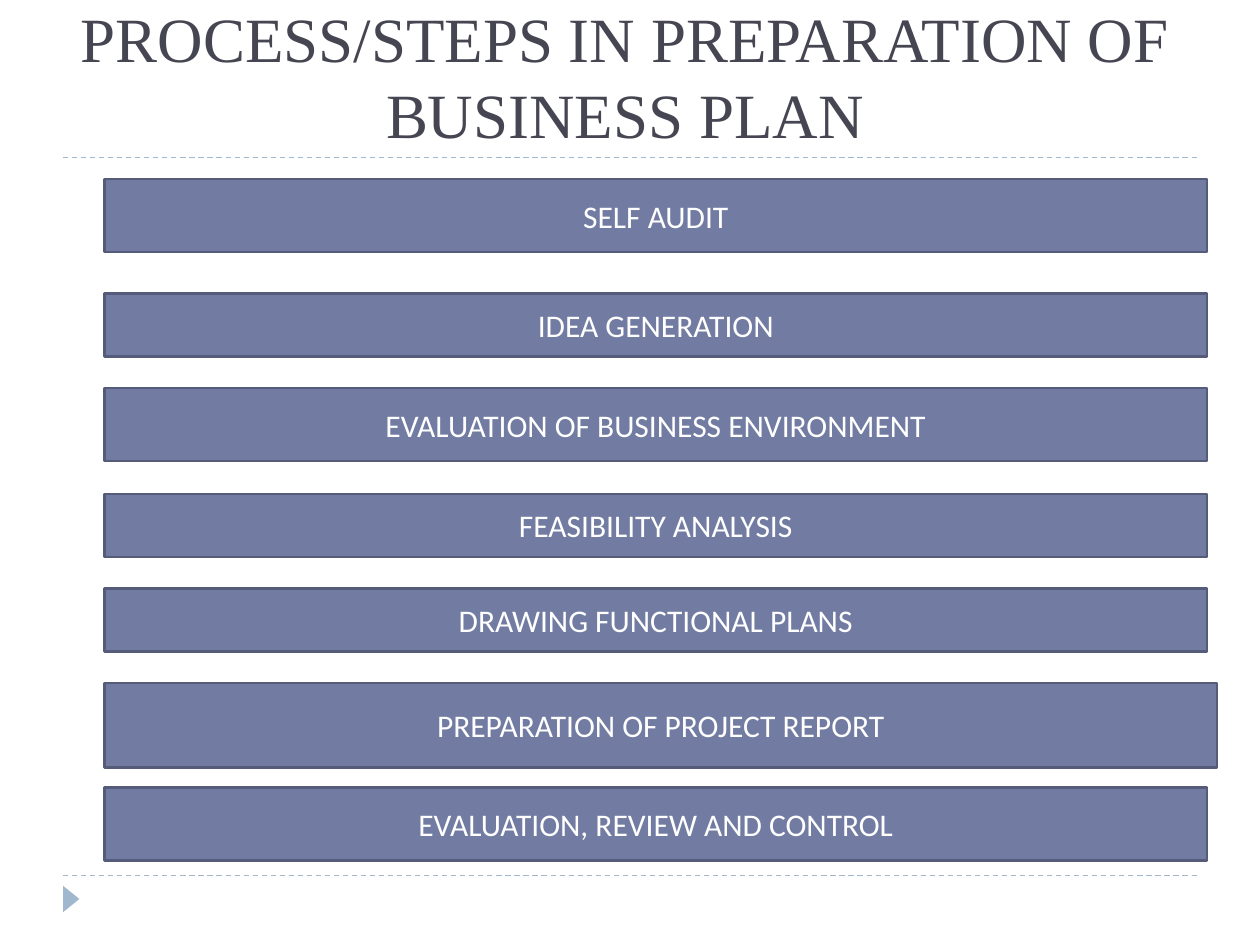
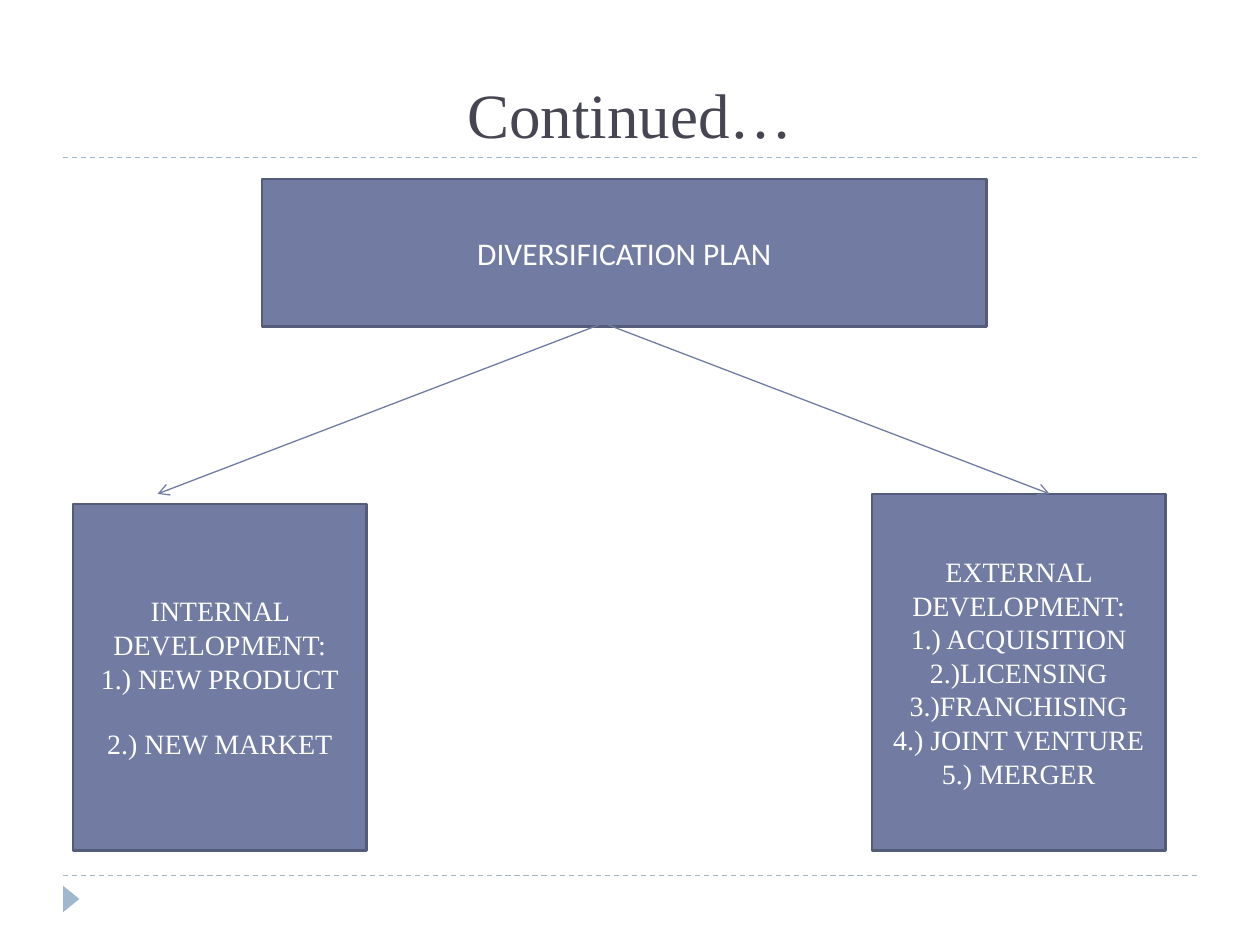
import pptx
import pptx.util
import pptx.dml.color
import pptx.enum.dml
import pptx.enum.shapes
import pptx.enum.text
import pptx.oxml.ns
import lxml.etree
import dataclasses

Inches = pptx.util.Inches
Pt = pptx.util.Pt
RGBColor = pptx.dml.color.RGBColor
Shapes = pptx.enum.shapes.MSO_SHAPE
Anchor = pptx.enum.text.MSO_ANCHOR
qn = pptx.oxml.ns.qn


@dataclasses.dataclass(frozen=True)
class Theme:
    title_color: RGBColor = RGBColor.from_string("464653")
    box_fill: RGBColor = RGBColor.from_string("727CA3")
    box_line: RGBColor = RGBColor.from_string("545C79")
    box_text: RGBColor = RGBColor.from_string("FFFFFF")
    accent: RGBColor = RGBColor.from_string("9FB8CD")
    heading_font: str = "Times New Roman"
    body_font: str = "Calibri"
    title_size: Pt = Pt(36)
    box_size: Pt = Pt(18)
    list_size: Pt = Pt(16)
    blank_line: Pt = Pt(18.4)
    box_border: Pt = Pt(1.5)
    thin_line: Pt = Pt(0.75)


theme = Theme()
title_format = {"name": theme.heading_font, "size": theme.title_size}
label_format = {"name": theme.body_font, "size": theme.box_size}
list_format = {"name": theme.heading_font, "size": theme.list_size}


def write_text(shape, lines, font_format, color, anchor):
    frame = shape.text_frame
    frame.text = "\n".join(lines)
    frame_format = {"word_wrap": True, "vertical_anchor": anchor,
                    "auto_size": pptx.enum.text.MSO_AUTO_SIZE.NONE}
    for name, value in frame_format.items():
        setattr(frame, name, value)
    for paragraph in frame.paragraphs:
        paragraph.alignment = pptx.enum.text.PP_ALIGN.CENTER
        font = paragraph.runs[0].font
        for name, value in font_format.items():
            setattr(font, name, value)
        font.color.rgb = color


def add_line(slide, start_x, start_y, end_x, end_y, color):
    line = slide.shapes.add_connector(
        pptx.enum.shapes.MSO_CONNECTOR.STRAIGHT,
        Inches(start_x), Inches(start_y), Inches(end_x), Inches(end_y))
    line.line.color.rgb = color
    line.line.width = theme.thin_line
    lxml.etree.SubElement(line._element.spPr, qn("a:effectLst"))
    return line


presentation = pptx.Presentation()
presentation.slide_width = Inches(10)
presentation.slide_height = Inches(7.5)

step_left, step_width = 0.83, 8.75
steps = [
    ("SELF AUDIT", 1.42, step_width, 0.58),
    ("IDEA GENERATION", 2.33, step_width, 0.5),
    ("EVALUATION OF BUSINESS ENVIRONMENT", 3.08, step_width, 0.58),
    ("FEASIBILITY ANALYSIS", 3.92, step_width, 0.5),
    ("DRAWING FUNCTIONAL PLANS", 4.67, step_width, 0.5),
    ("PREPARATION OF PROJECT REPORT", 5.42, 8.83, 0.67),
    ("EVALUATION, REVIEW AND CONTROL", 6.25, step_width, 0.58),
]
step_boxes = [([label], (step_left, top, width, height), label_format)
              for label, top, width, height in steps]

internal_lines = ["INTERNAL DEVELOPMENT:", "1.) NEW PRODUCT", "2.) NEW MARKET"]
external_lines = ["EXTERNAL DEVELOPMENT:", "1.) ACQUISITION", "2.)LICENSING",
                  "3.)FRANCHISING", "4.) JOINT VENTURE", "5.) MERGER"]
plan_boxes = [
    (["DIVERSIFICATION PLAN"], (2.08, 1.42, 5.75, 1.17), label_format),
    (internal_lines, (0.58, 4, 2.33, 2.75), list_format),
    (external_lines, (6.92, 3.92, 2.33, 2.83), list_format),
]
plan_arrows = [(4.75, 1.25), (4.83, 8.33)]

pages = [
    ("PROCESS/STEPS IN PREPARATION OF BUSINESS PLAN", (0.5, 0, 8.92, 1.25),
     step_boxes, []),
    ("Continued…", (0.5, 0.17, 9, 1.08), plan_boxes, plan_arrows),
]

for title_text, title_place, boxes, arrows in pages:
    slide = presentation.slides.add_slide(presentation.slide_layouts[5])

    for rule_y in (6.95, 1.25):
        rule = add_line(slide, 0.5, rule_y, 9.5, rule_y, theme.accent)
        rule.line.dash_style = pptx.enum.dml.MSO_LINE.DASH

    marker = slide.shapes.add_shape(
        Shapes.ISOSCELES_TRIANGLE,
        Inches(0.46), Inches(7.07), Inches(0.21), Inches(0.13))
    marker.rotation = 90
    marker.shadow.inherit = False
    marker.fill.solid()
    marker.fill.fore_color.rgb = theme.accent
    marker.line.fill.background()

    title = slide.shapes.title
    for name, value in zip(("left", "top", "width", "height"), title_place):
        setattr(title, name, Inches(value))
    write_text(title, [title_text], title_format, theme.title_color, Anchor.BOTTOM)

    for lines, place, font_format in boxes:
        box = slide.shapes.add_shape(Shapes.RECTANGLE, *map(Inches, place))
        box.shadow.inherit = False
        box.fill.solid()
        box.fill.fore_color.rgb = theme.box_fill
        box.line.color.rgb = theme.box_line
        box.line.width = theme.box_border
        write_text(box, lines, font_format, theme.box_text, Anchor.MIDDLE)
        if lines is internal_lines:
            box.text_frame.paragraphs[-1].space_before = theme.blank_line

    for start_x, end_x in arrows:
        arrow = add_line(slide, start_x, 2.58, end_x, 3.92, theme.box_fill)
        lxml.etree.SubElement(arrow.line._get_or_add_ln(), qn("a:tailEnd"), type="arrow")

presentation.save("out.pptx")
